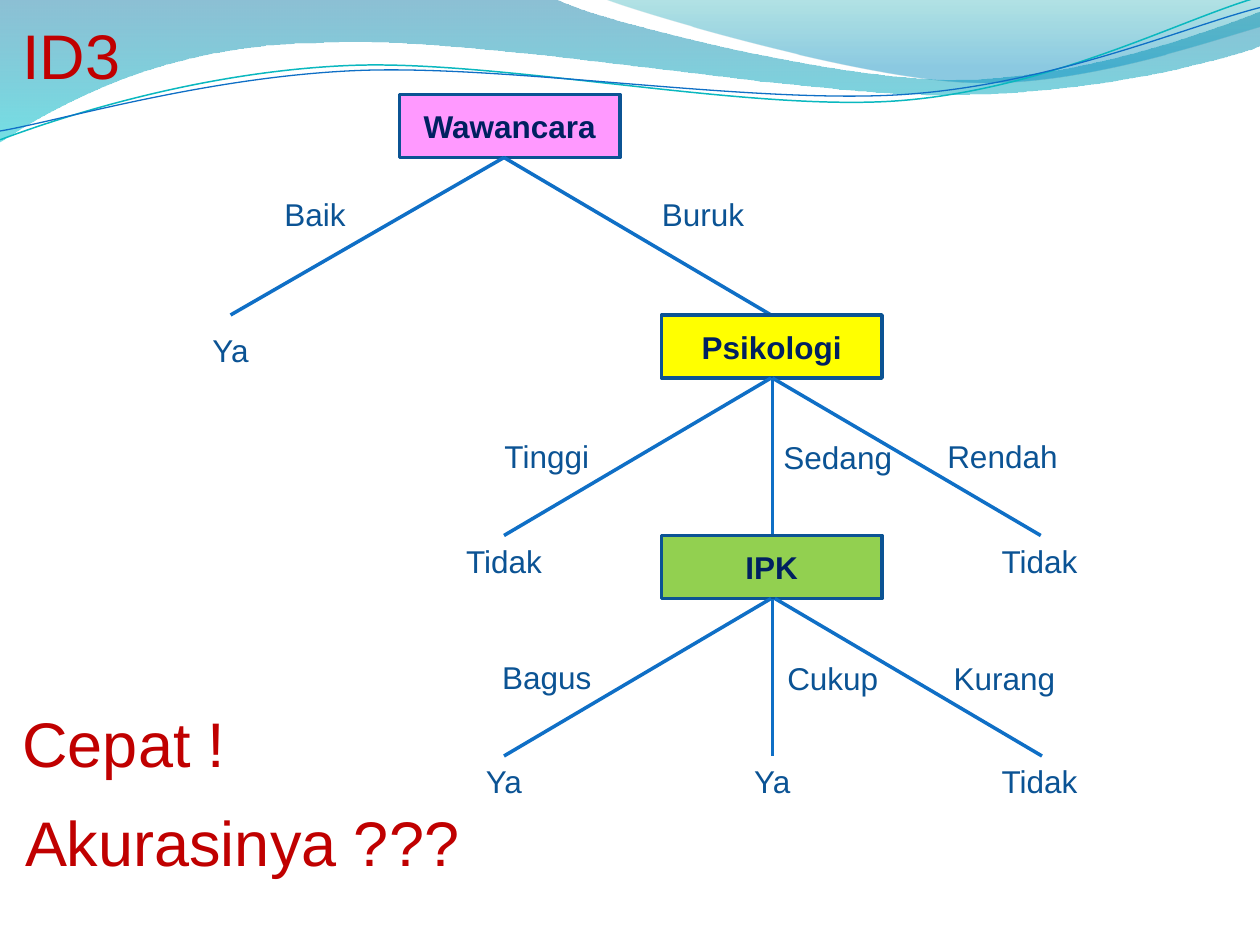
from dataclasses import dataclass
from math import cos, radians, sin

from lxml.etree import SubElement
from pptx import Presentation
from pptx.dml.color import RGBColor
from pptx.enum.shapes import MSO_CONNECTOR, MSO_SHAPE
from pptx.enum.text import MSO_ANCHOR, MSO_AUTO_SIZE, PP_ALIGN
from pptx.oxml.ns import qn
from pptx.util import Inches, Pt

COLORS = {
    "pink": "FF99FF", "yellow": "FFFF00", "green": "92D050",
    "outline": "0B5394", "node_text": "002060", "branch": "0F6FC6",
    "red": "C00000", "teal": "0AB8BF", "deep_blue": "0074A1",
    "cyan": "00C6CF", "sea": "00A1A9", "sky": "008BBF",
}
FONT = "Arial"
TILT = 357.3
TILT_CENTER = (4.99, 0.58)

Point = tuple[float, float]


@dataclass
class Stop:
    position: float
    color: str
    opacity: int


@dataclass
class Wave:
    start: Point
    pieces: list[tuple[float, ...]]
    stops: tuple[Stop, ...] = ()
    line_color: str = ""
    line_width: float = 0


@dataclass
class Node:
    text: str
    left: float
    top: float
    fill: str


@dataclass
class Branch:
    start: Point
    end: Point


@dataclass
class Label:
    text: str
    left: float
    top: float
    width: float = 1
    height: float = 0.42
    align: PP_ALIGN = PP_ALIGN.CENTER
    size: int = 18
    color: str = "outline"


def side_label(text: str, left: float, top: float) -> Label:
    return Label(text, left, top, 1.33, 0.4, PP_ALIGN.LEFT)


def headline(text: str, left: float, top: float, width: float) -> Label:
    return Label(text, left, top, width, 0.71, PP_ALIGN.LEFT, 36, "red")


PARTS = [
    Wave((0, -0.01), [
        (4.4, -0.01),
        (4.76, 0.17, 6.64, 0.63, 7.58, 0.63),
        (8.53, 0.63, 9.58, 0.26, 10, 0.09),
        (10.01, 0.36),
        (9.83, 0.44, 8.7, 0.76, 7.46, 0.75),
        (6.22, 0.75, 3.82, 0.28, 2.57, 0.34),
        (1.29, 0.35, 0.46, 0.83, -0.01, 1.13),
        (0, -0.01),
    ], (Stop(0, "deep_blue", 45), Stop(1, "cyan", 55))),
    Wave((4.79, -0.01), [
        (5.09, 0.11, 6.82, 0.62, 7.69, 0.65),
        (8.56, 0.69, 9.61, 0.32, 10, 0.21),
        (10, 0),
        (4.79, -0.01),
    ], (Stop(0, "sea", 30), Stop(0.8, "sky", 45))),
    Wave((0, 1.11), [
        (0.48, 0.93, 1.58, 0.57, 2.77, 0.52),
        (3.95, 0.47, 5.93, 0.89, 7.13, 0.8),
        (8.33, 0.71, 9.38, 0.15, 9.98, -0.02),
    ], line_color="teal", line_width=0.85),
    Wave((0, 1.04), [
        (0.47, 0.96, 1.64, 0.61, 2.83, 0.56),
        (4.03, 0.51, 5.97, 0.83, 7.17, 0.75),
        (8.36, 0.67, 9.41, 0.21, 10, 0.06),
    ], line_color="branch", line_width=0.75),
    Node("Wawancara", 3.17, 0.75, "pink"),
    Branch((4, 1.25), (1.83, 2.5)),
    Label("Baik", 2, 1.5),
    Label("Ya", 1.33, 2.58),
    Branch((4, 1.25), (6.12, 2.5)),
    Label("Buruk", 5.08, 1.5),
    Node("Psikologi", 5.25, 2.5, "yellow"),
    Branch((6.12, 3), (4, 4.25)),
    Label("Tinggi", 3.84, 3.42),
    Label("Tidak", 3.5, 4.25),
    Branch((6.13, 3), (6.13, 4.25)),
    side_label("Sedang", 6.12, 3.43),
    Node("IPK", 5.25, 4.25, "green"),
    Branch((6.12, 4.75), (4, 6)),
    Label("Bagus", 3.84, 5.17),
    Label("Ya", 3.5, 6),
    Branch((6.13, 4.75), (6.13, 6)),
    side_label("Cukup", 6.15, 5.18),
    Label("Ya", 5.63, 6),
    Branch((6.15, 4.75), (8.27, 6)),
    side_label("Kurang", 7.47, 5.18),
    Label("Tidak", 7.75, 6),
    Branch((6.13, 3), (8.26, 4.25)),
    side_label("Rendah", 7.42, 3.42),
    Label("Tidak", 7.75, 4.25),
    headline("ID3", 0.08, 0.08, 1.83),
    headline("Cepat !", 0.08, 5.54, 2.42),
    headline("Akurasinya ???", 0.1, 6.33, 4.15),
]


def rgb(name: str) -> RGBColor:
    return RGBColor.from_string(COLORS[name])


def place(x: float, y: float, angle: float) -> tuple[int, int]:
    turn = radians(-angle)
    dx, dy = x - TILT_CENTER[0], y - TILT_CENTER[1]
    return (Inches(TILT_CENTER[0] + dx * cos(turn) - dy * sin(turn)),
            Inches(TILT_CENTER[1] + dx * sin(turn) + dy * cos(turn)))


def draw_wave(page, wave: Wave) -> None:
    angle = 0 if wave.stops else TILT
    builder = page.shapes.build_freeform(*place(*wave.start, angle))
    ends = [place(*piece[-2:], angle) for piece in wave.pieces]
    builder.add_line_segments(ends, close=bool(wave.stops))
    shape = builder.convert_to_shape()
    segments = list(shape.element.spPr.iter(qn("a:lnTo")))
    for segment, piece in zip(segments, wave.pieces):
        if len(piece) == 6:
            segment.tag = qn("a:cubicBezTo")
            for index in (0, 1):
                x, y = place(*piece[2 * index:2 * index + 2], angle)
                point = SubElement(segment, qn("a:pt"),
                                   x=str(x - shape.left), y=str(y - shape.top))
                segment.insert(index, point)
    shape.rotation = angle
    shape.shadow.inherit = False
    if not wave.stops:
        shape.fill.background()
        shape.line.color.rgb = rgb(wave.line_color)
        shape.line.width = Pt(wave.line_width)
        return
    shape.line.fill.background()
    shape.fill.gradient()
    shape.fill.gradient_angle = 270
    for target, stop in zip(shape.fill.gradient_stops, wave.stops):
        target.position = stop.position
        target.color.rgb = rgb(stop.color)
    for color, stop in zip(shape.element.spPr.iter(qn("a:srgbClr")), wave.stops):
        SubElement(color, qn("a:alpha"), val=str(stop.opacity * 1000))


def write_text(frame, text: str, align: PP_ALIGN, size: int, color: str, bold: bool = False) -> None:
    frame.text = text
    para = frame.paragraphs[0]
    para.alignment = align
    font = para.runs[0].font
    font.name, font.size, font.bold = FONT, Pt(size), bold
    font.color.rgb = rgb(color)


def draw_node(page, node: Node) -> None:
    box = page.shapes.add_shape(
        MSO_SHAPE.FLOWCHART_PROCESS,
        Inches(node.left), Inches(node.top), Inches(1.75), Inches(0.5))
    box.shadow.inherit = False
    box.fill.solid()
    box.fill.fore_color.rgb = rgb(node.fill)
    box.line.color.rgb = rgb("outline")
    box.line.width = Pt(2)
    box.text_frame.vertical_anchor = MSO_ANCHOR.MIDDLE
    write_text(box.text_frame, node.text, PP_ALIGN.CENTER, 18, "node_text", True)


def draw_branch(page, branch: Branch) -> None:
    ends = [Inches(value) for value in branch.start + branch.end]
    line = page.shapes.add_connector(MSO_CONNECTOR.STRAIGHT, *ends)
    line.line.color.rgb = rgb("branch")
    line.line.width = Pt(2)
    SubElement(line.element.spPr, qn("a:effectLst"))


def draw_label(page, label: Label) -> None:
    box = page.shapes.add_textbox(
        Inches(label.left), Inches(label.top), Inches(label.width), Inches(label.height))
    box.text_frame.word_wrap = True
    box.text_frame.auto_size = MSO_AUTO_SIZE.SHAPE_TO_FIT_TEXT
    write_text(box.text_frame, label.text, label.align, label.size, label.color)


def main() -> None:
    deck = Presentation()
    deck.slide_width, deck.slide_height = Inches(10), Inches(7.5)
    page = deck.slides.add_slide(deck.slide_layouts[6])
    painters = {Wave: draw_wave, Node: draw_node, Branch: draw_branch, Label: draw_label}
    for part in PARTS:
        painters[type(part)](page, part)
    deck.save("out.pptx")


if __name__ == "__main__":
    main()
